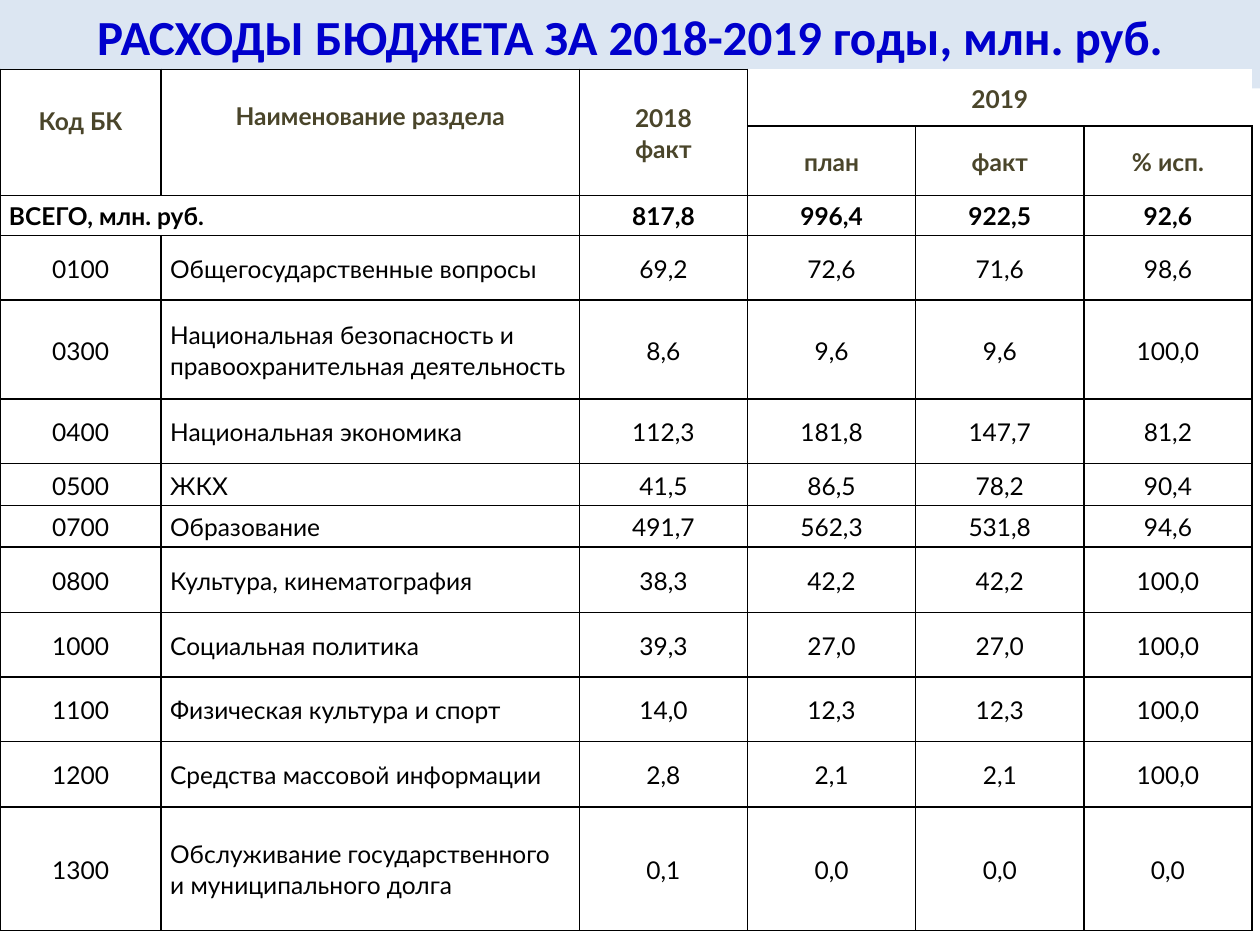
from lxml import etree
from pptx import Presentation
from pptx import util as u
from pptx.dml.color import RGBColor
from pptx.enum import text
from pptx.oxml import ns

COLORS = {
    "title": "0000CC",
    "title_band": "DCE6F2",
    "header": "4A452A",
    "body": "000000",
    "border": "000000",
    "cell": "FFFFFF",
}
COLUMN_WIDTHS = [3.25, 8.43] + [3.39] * 4
ROW_HEIGHTS = [1.14, 1.4, 0.81, 1.3, 2, 1.3, 0.84, 0.84, 1.32, 1.3, 1.3, 1.32, 2.49]
HEADER_ROWS = [
    ["Код БК", "Наименование раздела", "2018\nфакт", "2019", "", ""],
    ["", "", "", "план", "факт", "% исп."],
]
TOTAL_ROW = ["ВСЕГО, млн. руб.", "", "817,8", "996,4", "922,5", "92,6"]
SECTION_ROWS = [
    ["0100", "Общегосударственные вопросы", "69,2", "72,6", "71,6", "98,6"],
    ["0300", "Национальная безопасность и правоохранительная деятельность",
     "8,6", "9,6", "9,6", "100,0"],
    ["0400", "Национальная экономика", "112,3", "181,8", "147,7", "81,2"],
    ["0500", "ЖКХ", "41,5", "86,5", "78,2", "90,4"],
    ["0700", "Образование", "491,7", "562,3", "531,8", "94,6"],
    ["0800", "Культура, кинематография", "38,3", "42,2", "42,2", "100,0"],
    ["1000", "Социальная политика", "39,3", "27,0", "27,0", "100,0"],
    ["1100", "Физическая культура и спорт", "14,0", "12,3", "12,3", "100,0"],
    ["1200", "Средства массовой информации", "2,8", "2,1", "2,1", "100,0"],
    ["1300", "Обслуживание государственного и муниципального долга",
     "0,1", "0,0", "0,0", "0,0"],
]
MERGES = [(0, 0, 1, 0), (0, 1, 1, 1), (0, 2, 1, 2), (0, 3, 0, 5), (2, 0, 2, 1)]


def color(name):
    return RGBColor.from_string(COLORS[name])


def format_runs(paragraph, font, size, color_name, bold):
    for run in paragraph.runs:
        run.font.name = font
        run.font.size = u.Pt(size)
        run.font.bold = bold
        run.font.color.rgb = color(color_name)


def add_title(slide, wording):
    title = slide.shapes.title
    title.left, title.top, title.width, title.height = u.Cm(0), u.Cm(0), u.Cm(25.4), u.Cm(1.45)
    title.fill.solid()
    title.fill.fore_color.rgb = color("title_band")
    frame = title.text_frame
    frame.text = wording
    frame.auto_size = text.MSO_AUTO_SIZE.SHAPE_TO_FIT_TEXT
    frame.vertical_anchor = text.MSO_ANCHOR.MIDDLE
    frame.paragraphs[0].alignment = text.PP_ALIGN.CENTER
    format_runs(frame.paragraphs[0], "Calibri", 28, "title", True)


def set_borders(cell, hidden):
    properties = cell._tc.get_or_add_tcPr()
    for side in "LRTB":
        line = etree.SubElement(properties, ns.qn(f"a:ln{side}"), w=str(u.Pt(1)))
        if side in hidden:
            etree.SubElement(line, ns.qn("a:noFill"))
        else:
            fill = etree.SubElement(line, ns.qn("a:solidFill"))
            etree.SubElement(fill, ns.qn("a:srgbClr"), val=COLORS["border"])


def format_cell(cell, wording, color_name, bold, alignment, hidden):
    set_borders(cell, hidden)
    cell.fill.solid()
    cell.fill.fore_color.rgb = color("cell")
    cell.margin_left = cell.margin_right = u.Cm(0.18)
    cell.margin_top = cell.margin_bottom = u.Cm(0)
    cell.vertical_anchor = text.MSO_ANCHOR.MIDDLE
    cell.text_frame.text = wording
    for paragraph in cell.text_frame.paragraphs:
        paragraph.alignment = alignment
        paragraph.line_spacing = 1.07
        paragraph.font.size = u.Pt(14)
        format_runs(paragraph, "Lato", 14, color_name, bold)


def add_budget_table(slide):
    rows = HEADER_ROWS + [TOTAL_ROW] + SECTION_ROWS
    table = slide.shapes.add_table(
        len(rows), len(COLUMN_WIDTHS), u.Cm(0), u.Cm(1.4),
        u.Cm(sum(COLUMN_WIDTHS)), u.Cm(sum(ROW_HEIGHTS))).table
    table.first_row = table.horz_banding = False
    for column, width in zip(table.columns, COLUMN_WIDTHS):
        column.width = u.Cm(width)
    for row, height in zip(table.rows, ROW_HEIGHTS):
        row.height = u.Cm(height)

    total = len(HEADER_ROWS)
    for i, row in enumerate(rows):
        for j, wording in enumerate(row):
            left_aligned = (i == total and j == 0) or (i > total and j == 1)
            alignment = text.PP_ALIGN.LEFT if left_aligned else text.PP_ALIGN.CENTER
            hidden = "TR" if i == 0 and j >= 3 else ""
            color_name = "header" if i < total else "body"
            format_cell(table.cell(i, j), wording, color_name, i <= total, alignment, hidden)

    for top, left, bottom, right in MERGES:
        table.cell(top, left).merge(table.cell(bottom, right))
    code_header, name_header = table.cell(0, 0), table.cell(0, 1)
    code_header.vertical_anchor = text.MSO_ANCHOR.TOP
    code_header.margin_top = name_header.margin_bottom = u.Cm(0.71)


def main():
    presentation = Presentation()
    presentation.slide_width, presentation.slide_height = u.Cm(25.4), u.Cm(19.05)
    slide = presentation.slides.add_slide(presentation.slide_layouts[5])
    add_title(slide, "РАСХОДЫ БЮДЖЕТА ЗА 2018-2019 годы, млн. руб.")
    add_budget_table(slide)
    presentation.save("out.pptx")


if __name__ == "__main__":
    main()
